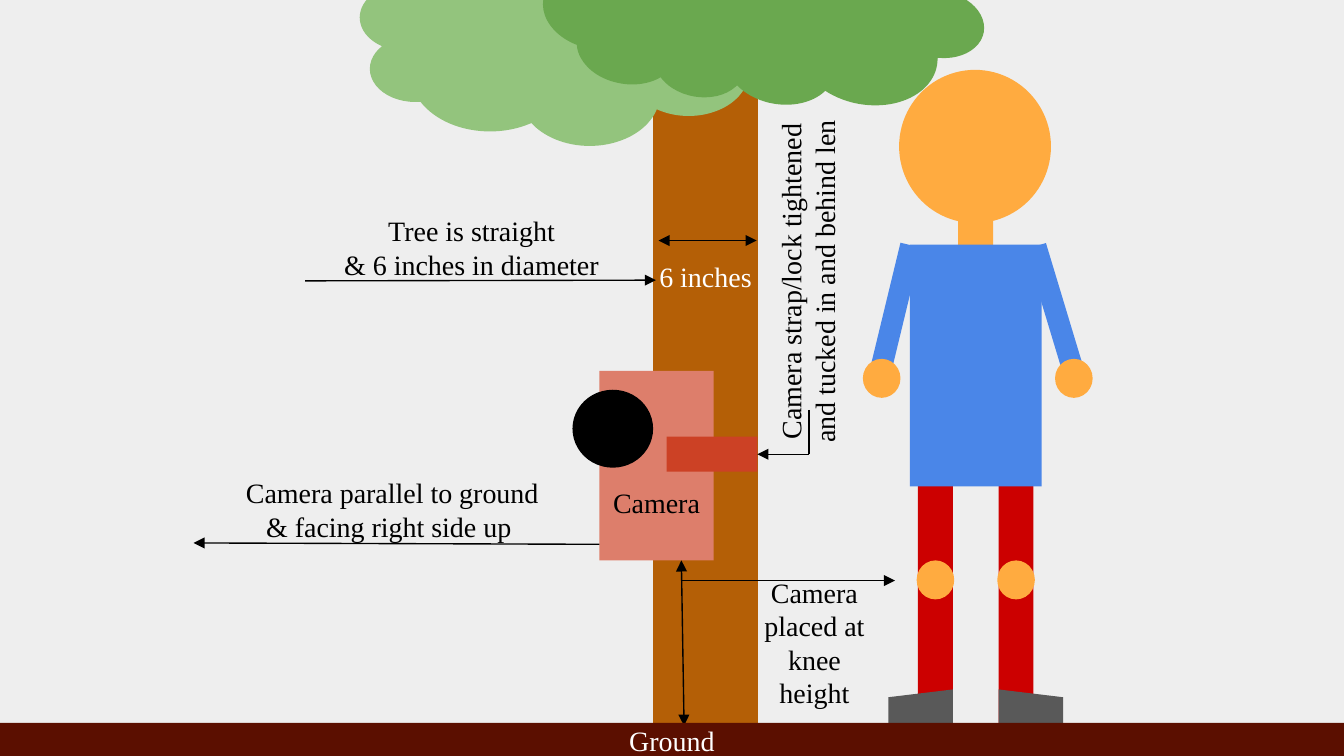
"""Build a slide that shows how to mount a camera on a tree."""
from dataclasses import dataclass

from pptx import Presentation, util as u
from pptx.dml.color import RGBColor
from pptx.enum import shapes, text
from pptx.oxml.ns import qn
from lxml import etree

Kind = shapes.MSO_SHAPE
CELL = u.Inches(0.1)
COLS, ROWS = 100, 56.25


@dataclass(frozen=True)
class Theme:
    back: str = "EEEEEE"
    bark: str = "B45F06"
    case: str = "DD7E6B"
    strap: str = "CC4125"
    leg: str = "CC0000"
    skin: str = "FFAB40"
    shirt: str = "4A86E8"
    shoe: str = "595959"
    pale: str = "93C47D"
    leaf: str = "6AA84F"
    soil: str = "5B0F00"
    dark: str = "000000"
    light: str = "FFFFFF"
    font: str = "Times New Roman"
    size: float = 15
    line: float = 0.75


@dataclass(frozen=True)
class Box:
    col: float
    row: float
    wide: float
    high: float
    turn: float = 0


@dataclass(frozen=True)
class Part:
    box: Box
    fill: str
    kind: Kind = Kind.RECTANGLE
    flip: bool = False


@dataclass(frozen=True)
class Note:
    box: Box
    words: str
    tint: str = Theme.dark


@dataclass(frozen=True)
class Arrow:
    start: tuple[float, float]
    end: tuple[float, float]
    head: bool = False
    tail: bool = True


T = Theme()
OVAL, SHOE = Kind.OVAL, Kind.FLOWCHART_MANUAL_INPUT

TREE = Part(Box(48.6, 0, 7.8, ROWS), T.bark)
CASE = Part(Box(44.6, 27.6, 8.5, 14.1), T.case)
STRAP = Part(Box(49.6, 32.5, 6.75, 2.6), T.strap)
LENS = Part(Box(42.6, 29, 6, 5.8), T.dark, OVAL)
SOIL = Part(Box(0, 53.8, COLS, 2.6), T.soil)

LEGS = [
    part
    for left, flip in ((68.3, False), (74.3, True))
    for part in (
        Part(Box(left, 33.3, 2.6, 20.5), T.leg),
        Part(Box(left - 0.1, 41.7, 2.8, 2.9), T.skin, OVAL),
        Part(Box(left if flip else left - 2.2, 51.3, 4.8, 2.9), T.shoe, SHOE, flip),
    )
]
TRUNK = [
    Part(Box(71.3, 15.2, 2.6, 3.7), T.skin),
    Part(Box(66.9, 5.2, 11.3, 11.4), T.skin, OVAL),
    Part(Box(67.7, 18.2, 9.8, 18), T.shirt),
]
ARMS = [
    part
    for sleeve, turn, hand in ((77.7, 163.2, 78.5), (65.8, 193.6, 64.2))
    for part in (
        Part(Box(sleeve, 18.1, 1.6, 10, turn), T.shirt),
        Part(Box(hand, 26.7, 2.8, 2.9), T.skin, OVAL),
    )
]
LEAVES = [
    Part(Box(26.8, -7.2, 33.4, 18), T.pale, Kind.CLOUD),
    Part(Box(40.1, -10, 33.4, 18, 190), T.leaf, Kind.CLOUD),
]
ARROWS = [
    Arrow((50.9, 54), (50.7, 41.7), head=True),
    Arrow((44.6, 40.5), (14.4, 40.4)),
    Arrow((60.2, 30.5), (60.2, 33.8), tail=False),
    Arrow((50.7, 43.2), (66.6, 43.2)),
    Arrow((22.7, 20.9), (48.8, 20.85)),
    Arrow((49, 17.9), (56.3, 17.9), head=True),
]
NOTES = [
    Note(Box(55, 41.8, 11.2, 12.1), "Camera placed at knee height"),
    Note(Box(16.8, 34.4, 24.8, 7.1), "Camera parallel to ground & facing right side up "),
    Note(Box(46.7, 17.4, 26.8, 7.1, 270),
         "Camera strap/lock tightened and tucked in and behind len"),
    Note(Box(44.6, 35.1, 8.5, 4.5), "Camera"),
    Note(Box(24.6, 14.9, 21, 7.1), "Tree is straight\n& 6 inches in diameter"),
    Note(Box(47.7, 18.3, 9.6, 4.5), "6 inches", T.light),
]


def cells(*spans: float) -> list[int]:
    return [round(span * CELL) for span in spans]


def place(box: Box) -> list[int]:
    return cells(box.col, box.row, box.wide, box.high)


def draw(slide, part: Part):
    shape = slide.shapes.add_shape(part.kind, *place(part.box))
    shape.rotation = part.box.turn
    shape.shadow.inherit = False
    shape.fill.solid()
    shape.fill.fore_color.rgb = RGBColor.from_string(part.fill)
    shape.line.fill.background()
    if part.flip:
        shape._element.spPr.find(qn("a:xfrm")).set("flipH", "1")
    return shape


def write(frame, words: str, tint: str) -> None:
    frame.text = words
    frame.word_wrap = True
    frame.margin_left = frame.margin_right = CELL
    frame.margin_top = frame.margin_bottom = CELL
    for para in frame.paragraphs:
        para.alignment = text.PP_ALIGN.CENTER
        for run in para.runs:
            run.font.name = T.font
            run.font.size = u.Pt(T.size)
            run.font.color.rgb = RGBColor.from_string(tint)


def label(slide, note: Note) -> None:
    shape = slide.shapes.add_textbox(*place(note.box))
    shape.rotation = note.box.turn
    write(shape.text_frame, note.words, note.tint)


def point(slide, arrow: Arrow):
    line = slide.shapes.add_connector(
        shapes.MSO_CONNECTOR.STRAIGHT, *cells(*arrow.start, *arrow.end))
    line.line.width = u.Pt(T.line)
    line.line.color.rgb = RGBColor.from_string(T.dark)
    edge = line.line._get_or_add_ln()
    for tag, shown in (("a:headEnd", arrow.head), ("a:tailEnd", arrow.tail)):
        if shown:
            etree.SubElement(edge, qn(tag)).set("type", "triangle")
    etree.SubElement(line._element.spPr, qn("a:effectLst"))
    return line


def main() -> None:
    deck = Presentation()
    deck.slide_width, deck.slide_height = cells(COLS, ROWS)
    slide = deck.slides.add_slide(deck.slide_layouts[6])
    slide.background.fill.solid()
    slide.background.fill.fore_color.rgb = RGBColor.from_string(T.back)

    for part in (TREE, CASE):
        draw(slide, part)
    strap = draw(slide, STRAP)
    for part in (LENS, *LEGS, *TRUNK, *ARMS, *LEAVES):
        draw(slide, part)
    for arrow in ARROWS:
        point(slide, arrow)
    point(slide, Arrow((60.2, 33.8), (56.35, 33.8))).end_connect(strap, 3)
    for note in NOTES:
        label(slide, note)
    ground = draw(slide, SOIL).text_frame
    write(ground, "Ground", T.light)
    ground.vertical_anchor = text.MSO_ANCHOR.MIDDLE
    deck.save("out.pptx")


if __name__ == "__main__":
    main()
